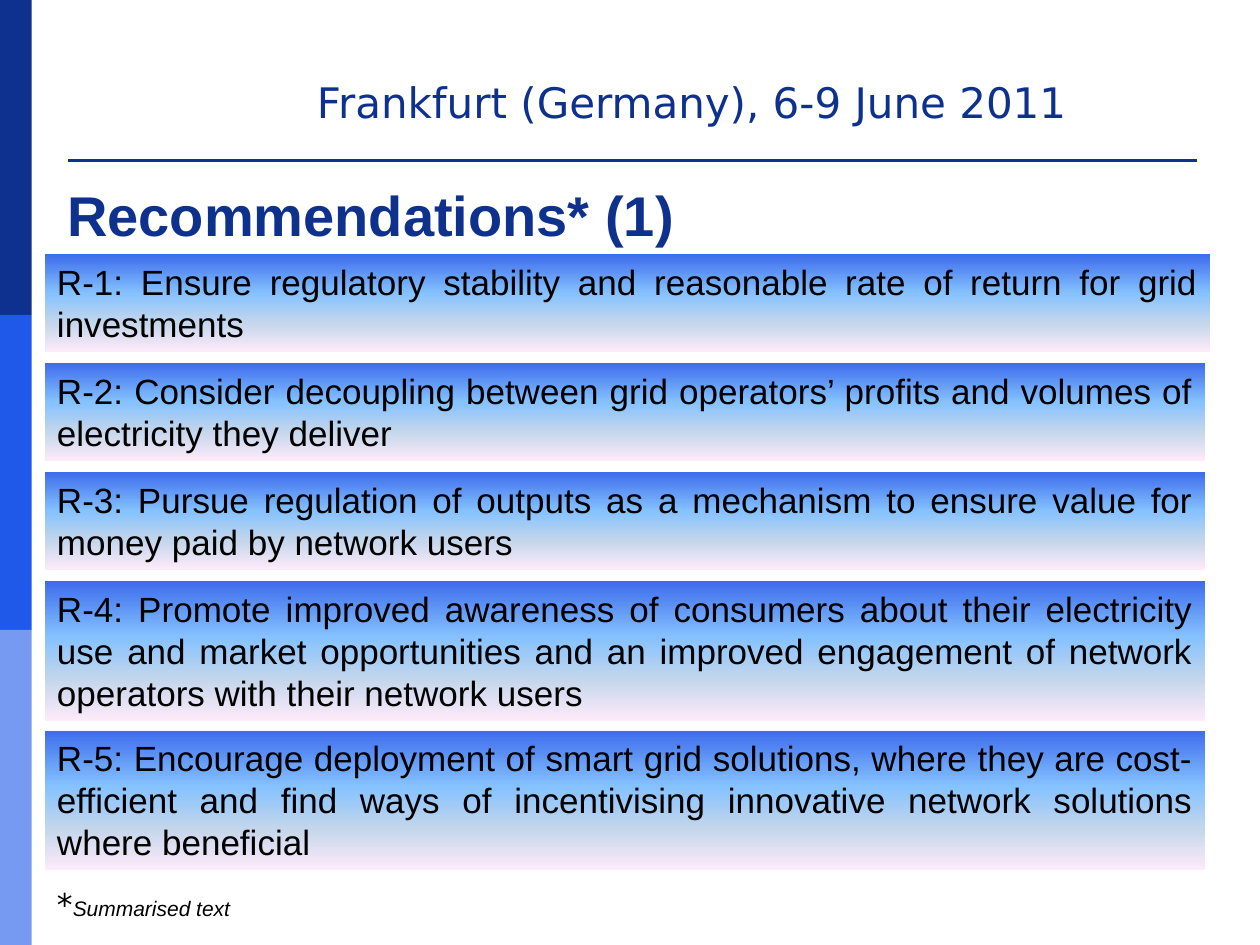
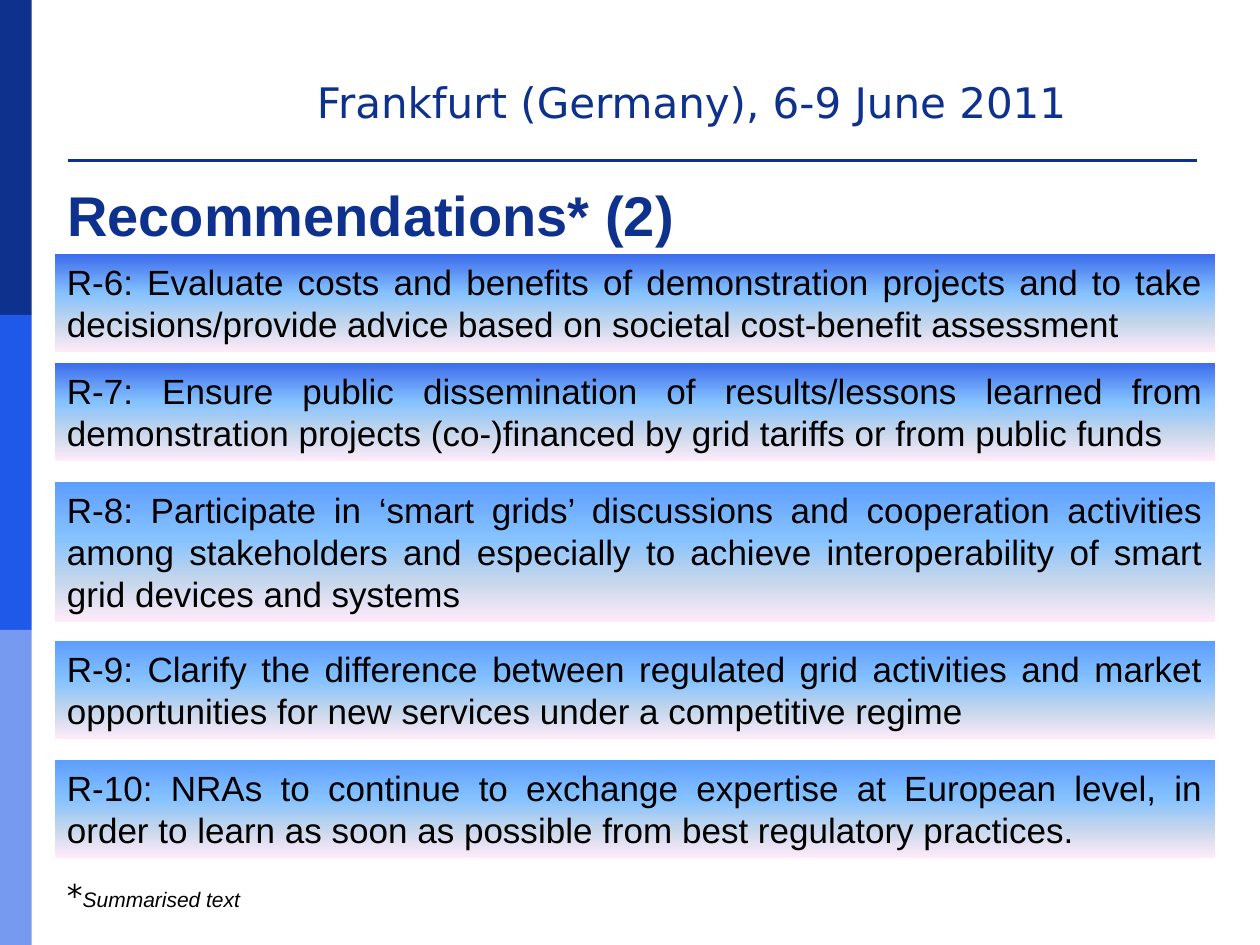
"""Builds two slides of smart grid recommendations."""
from lxml import etree
from pptx import Presentation
from pptx.dml.color import RGBColor
from pptx.enum.shapes import MSO_SHAPE
from pptx.enum.text import MSO_ANCHOR, MSO_AUTO_SIZE, PP_ALIGN
from pptx.oxml.ns import qn
from pptx.util import Cm, Pt

RECT = MSO_SHAPE.RECTANGLE
LEFT, JUSTIFY = PP_ALIGN.LEFT, PP_ALIGN.JUSTIFY
TOP, MIDDLE = MSO_ANCHOR.TOP, MSO_ANCHOR.MIDDLE
GROW, FIXED = MSO_AUTO_SIZE.SHAPE_TO_FIT_TEXT, MSO_AUTO_SIZE.NONE

NAVY = RGBColor(0x0E, 0x31, 0x8D)
BLUE = RGBColor(0x1F, 0x59, 0xE9)
PALE = RGBColor(0x77, 0x9A, 0xF1)
BLACK = RGBColor(0, 0, 0)
ROYAL = RGBColor(0x3D, 0x6D, 0xEC)
AZURE = RGBColor(0x5E, 0x9E, 0xFF)
FADE = [(40, RGBColor(0x85, 0xC2, 0xFF)), (70, RGBColor(0xC4, 0xD6, 0xEB)),
        (100, RGBColor(0xFF, 0xEB, 0xFA))]
SANS, WIDE = "Arial", "DejaVu Sans"

SLIDES = [
    ("Recommendations* (1)", 0.9, 17.72, [
        (5.13, 23.5, 2, ROYAL, "R-1: Ensure regulatory stability and reasonable rate of return for grid investments"),
        (7.32, 23.4, 2, ROYAL, "R-2: Consider decoupling between grid operators’ profits and volumes of electricity they deliver"),
        (9.52, 23.4, 2, ROYAL, "R-3: Pursue regulation of outputs as a mechanism to ensure value for money paid by network users"),
        (11.72, 23.4, 3, ROYAL, "R-4: Promote improved awareness of consumers about their electricity use and market "
         "opportunities and an improved engagement of network operators with their network users"),
        (14.73, 23.4, 3, ROYAL, "R-5: Encourage deployment of smart grid solutions, where they are cost-efficient and "
         "find ways of incentivising innovative network solutions where beneficial"),
    ]),
    ("Recommendations* (2)", 1.1, 17.53, [
        (5.13, 23.4, 2, ROYAL, "R-6: Evaluate costs and benefits of demonstration projects and to take "
         "decisions/provide advice based on societal cost-benefit assessment"),
        (7.32, 23.4, 2, ROYAL, "R-7: Ensure public dissemination of results/lessons learned from "
         "demonstration projects (co-)financed by grid tariffs or from public funds"),
        (9.72, 23.4, 3, AZURE, "R-8: Participate in ‘smart grids’ discussions and cooperation activities among "
         "stakeholders and especially to achieve interoperability of smart grid devices and systems"),
        (12.93, 23.4, 2, AZURE, "R-9: Clarify the difference between regulated grid activities and market "
         "opportunities for new services under a competitive regime"),
        (15.32, 23.4, 2, AZURE, "R-10: NRAs to continue to exchange expertise at European level, in order to learn "
         "as soon as possible from best regulatory practices."),
    ]),
]


def write(tf, text, size=20, font=SANS, color=BLACK, bold=False, italic=False,
          align=LEFT, anchor=TOP, fit=GROW):
    tf.word_wrap = True
    tf.auto_size = fit
    tf.vertical_anchor = anchor
    p = tf.paragraphs[0]
    p.alignment = align
    r = p.add_run()
    r.text = text
    r.font.size, r.font.name = Pt(size), font
    r.font.bold, r.font.italic = bold, italic
    r.font.color.rgb = color


def add_rect(s, left, top, width, height):
    sp = s.shapes.add_shape(RECT, Cm(left), Cm(top), Cm(width), Cm(height))
    sp.shadow.inherit = False
    sp.line.fill.background()
    return sp


prs = Presentation()
prs.slide_width, prs.slide_height = Cm(25.4), Cm(19.05)

for title, left, note_top, bars in SLIDES:
    s = prs.slides.add_slide(prs.slide_layouts[5])

    for i, color in enumerate((NAVY, BLUE, PALE)):
        band = add_rect(s, 0, 6.35 * i, 0.64, 6.35)
        band.fill.solid()
        band.fill.fore_color.rgb = color

    table = s.shapes.add_table(1, 1, Cm(1.37), Cm(2.72), Cm(22.76), Cm(0.51)).table
    table.first_row = table.horz_banding = False
    cell = table.cell(0, 0)
    cell.margin_top = cell.margin_bottom = 0
    etree.SubElement(cell.text_frame.paragraphs[0]._p, qn("a:endParaRPr"), sz="800")
    tc_pr = cell._tc.get_or_add_tcPr()
    for side in ("a:lnL", "a:lnR", "a:lnT"):
        etree.SubElement(etree.SubElement(tc_pr, qn(side)), qn("a:noFill"))
    rule = etree.SubElement(tc_pr, qn("a:lnB"), w=str(Pt(2.25)))
    rule_fill = etree.SubElement(rule, qn("a:solidFill"))
    etree.SubElement(rule_fill, qn("a:srgbClr"), val=str(NAVY))
    cell.fill.background()

    header = s.shapes.add_textbox(Cm(6.14), Cm(1.42), Cm(16.71), Cm(1.27))
    write(header.text_frame, "Frankfurt (Germany), 6-9 June 2011", size=24, font=WIDE, color=NAVY)

    heading = s.shapes.title
    heading.left, heading.top = Cm(1.1), Cm(3.52)
    heading.width, heading.height = Cm(17.4), Cm(1.6)
    write(heading.text_frame, title, size=32, color=NAVY, bold=True, anchor=MIDDLE, fit=FIXED)

    for top, width, lines, start, text in bars:
        bar = add_rect(s, left, top, width, 0.27 + 0.85 * lines)
        bar.fill.gradient()
        bar.fill.gradient_angle = 270
        stops = bar._element.spPr.find(qn("a:gradFill")).find(qn("a:gsLst"))
        for old in list(stops):
            stops.remove(old)
        for percent, color in [(0, start)] + FADE:
            stop = etree.SubElement(stops, qn("a:gs"), pos=str(percent * 1000))
            etree.SubElement(stop, qn("a:srgbClr"), val=str(color))
        write(bar.text_frame, text, align=JUSTIFY)

    note = s.shapes.add_textbox(Cm(left), Cm(note_top), Cm(8), Cm(1.02))
    write(note.text_frame, "*", size=18, font=WIDE, italic=True)
    write(note.text_frame, "Summarised text", size=12, italic=True)

prs.save("out.pptx")
